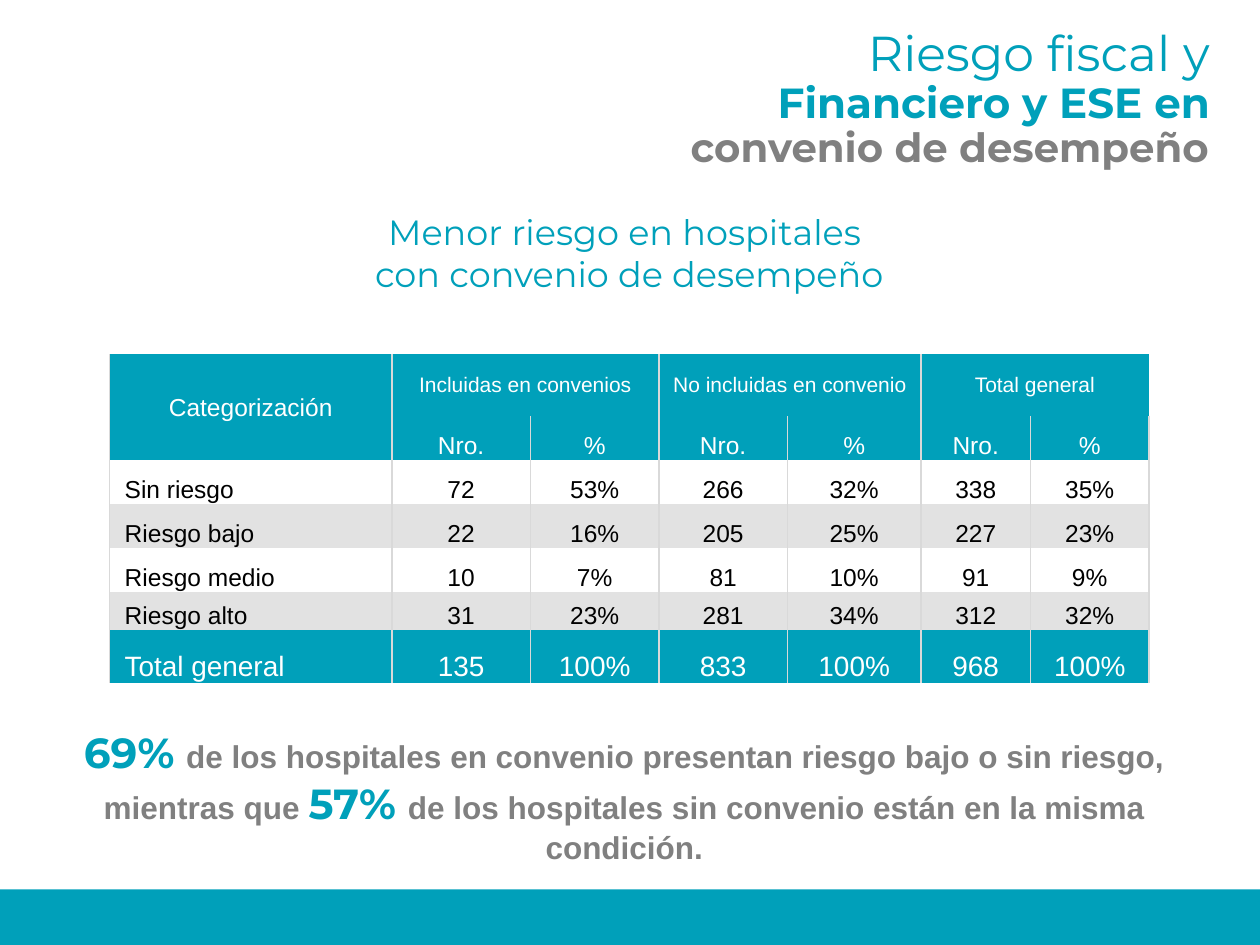
from lxml import etree
from pptx import Presentation
from pptx.dml.color import RGBColor
from pptx.enum.shapes import MSO_SHAPE
from pptx.enum.text import MSO_ANCHOR, MSO_AUTO_SIZE, PP_ALIGN
from pptx.oxml import parse_xml
from pptx.oxml.ns import nsdecls, qn
from pptx.util import Inches, Pt

LEFT, CENTER, RIGHT = PP_ALIGN.LEFT, PP_ALIGN.CENTER, PP_ALIGN.RIGHT
TOP, MIDDLE, BOTTOM = MSO_ANCHOR.TOP, MSO_ANCHOR.MIDDLE, MSO_ANCHOR.BOTTOM
TEAL, GRAY, BAND, RULE = "00A0BA", "808080", "E2E2E2", "D9D9D9"
WHITE, BLACK = "FFFFFF", "000000"
NO_TABLE_STYLE = "{2D5ABB26-0587-4C30-8999-92F81FD0307C}"


def rgb(value):
    return RGBColor.from_string(value)


def write(tf, paragraphs, align, anchor=TOP):
    """Fill a text frame; each paragraph is a list of (text, format) runs."""
    tf.word_wrap = True
    tf.vertical_anchor = anchor
    for i, runs in enumerate(paragraphs):
        p = tf.paragraphs[0] if i == 0 else tf.add_paragraph()
        p.alignment = align
        for text, (name, size, color, bold) in runs:
            r = p.add_run()
            r.text = text
            for key, value in dict(name=name, size=Pt(size), bold=bold).items():
                setattr(r.font, key, value)
            r.font.color.rgb = rgb(color)


prs = Presentation()
prs.slide_width, prs.slide_height = Inches(10), Inches(7.5)
s = prs.slides.add_slide(prs.slide_layouts[5])

# Footer band
sp = s.shapes.add_shape(MSO_SHAPE.RECTANGLE, 0, Inches(7.06), Inches(10), Inches(0.44))
sp.shadow.inherit = False
sp.fill.solid()
sp.fill.fore_color.rgb = rgb(TEAL)
sp.line.fill.background()

# Title
title = s.shapes.title
title.left, title.top, title.width, title.height = map(Inches, (6.23, 0.13, 3.47, 0.57))
write(title.text_frame, [[("Riesgo fiscal y", ("Montserrat", 28, TEAL, False))]], RIGHT)
title.text_frame.auto_size = MSO_AUTO_SIZE.NONE

# Title continuation, subtitle and conclusion
big = ("Montserrat", 24, TEAL, True)
subtitle = ("Montserrat", 20, TEAL, False)
remark = ("Arial", 18, GRAY, True)
text_boxes = [
    ((5.74, 0.49, 3.96, 0.63), RIGHT, MIDDLE, [[("Financiero y ESE en", big)]]),
    ((5.09, 0.92, 4.61, 0.49), RIGHT, TOP,
     [[("convenio de desempeño", ("Montserrat", 23, GRAY, True))]]),
    ((1.61, 1.62, 6.77, 0.77), CENTER, TOP,
     [[("Menor riesgo en hospitales ", subtitle)], [("con convenio de desempeño", subtitle)]]),
    ((0.2, 5.72, 9.51, 1.21), CENTER, TOP,
     [[("69% ", big),
       ("de los hospitales en convenio presentan riesgo bajo o sin riesgo, mientras que ", remark),
       ("57% ", big),
       ("de los hospitales sin convenio están en la misma condición.", remark)]]),
]
for box, align, anchor, paragraphs in text_boxes:
    tb = s.shapes.add_textbox(*map(Inches, box))
    write(tb.text_frame, paragraphs, align, anchor)

# Risk table: one row of text, then its fill, text colour and size
rows = [
    (["Categorización", "Incluidas en convenios", "", "No incluidas en convenio", "",
      "Total general", ""], TEAL, WHITE, 12),
    ([""] + ["Nro.", "%"] * 3, TEAL, WHITE, 14),
    (["Sin riesgo", "72", "53%", "266", "32%", "338", "35%"], WHITE, BLACK, 14),
    (["Riesgo bajo", "22", "16%", "205", "25%", "227", "23%"], BAND, BLACK, 14),
    (["Riesgo medio", "10", "7%", "81", "10%", "91", "9%"], WHITE, BLACK, 14),
    (["Riesgo alto", "31", "23%", "281", "34%", "312", "32%"], BAND, BLACK, 14),
    (["Total general", "135", "100%", "833", "100%", "968", "100%"], TEAL, WHITE, 16),
]
col_widths = [2.24, 1.1, 1.02, 1.02, 1.06, 0.87, 0.94]
row_heights = [0.49, 0.35, 0.35, 0.35, 0.35, 0.3, 0.42]
frame = s.shapes.add_table(len(rows), len(col_widths), Inches(0.87), Inches(2.81),
                           Inches(8.27), Inches(2.61))
table = frame.table
table.first_row = table.horz_banding = False
table._tbl.tblPr.find(qn("a:tableStyleId")).text = NO_TABLE_STYLE
for column, width in zip(table.columns, col_widths):
    column.width = Inches(width)
for row, height in zip(table.rows, row_heights):
    row.height = Inches(height)

# Header spans
table.cell(0, 0).merge(table.cell(1, 0))
for col in (1, 3, 5):
    table.cell(0, col).merge(table.cell(0, col + 1))

for i, (texts, fill, color, size) in enumerate(rows):
    for j, text in enumerate(texts):
        cell = table.cell(i, j)
        cell.fill.solid()
        cell.fill.fore_color.rgb = rgb(fill)
        label = j == 0 and i > 1
        cell.margin_left = Inches(0.12 if label else 0.01)
        cell.margin_top = cell.margin_right = Inches(0.01)
        cell.margin_bottom = 0
        cell.vertical_anchor = MIDDLE if i == 0 else BOTTOM
        p = cell.text_frame.paragraphs[0]
        p.alignment = LEFT if label else CENTER
        font_size = Pt(14 if (i, j) == (0, 0) else size)
        if text:
            r = p.add_run()
            r.text = text
            for key, value in dict(name="Arial", size=font_size, bold=False).items():
                setattr(r.font, key, value)
            r.font.color.rgb = rgb(color)
        else:
            p.font.size = font_size

        # Vertical rules, left out between "Nro." and "%" in the header
        sides = ["lnR", "lnL"]
        if i < 2 and j > 0:
            sides = ["lnL"] if j % 2 else ["lnR"]
        tc_pr = cell._tc.get_or_add_tcPr()
        for side in sides:
            line = parse_xml(f'<a:{side} {nsdecls("a")} w="{Pt(1)}"/>')
            solid = etree.SubElement(line, qn("a:solidFill"))
            etree.SubElement(solid, qn("a:srgbClr"), val=RULE)
            tc_pr.insert(0, line)

prs.save("out.pptx")
